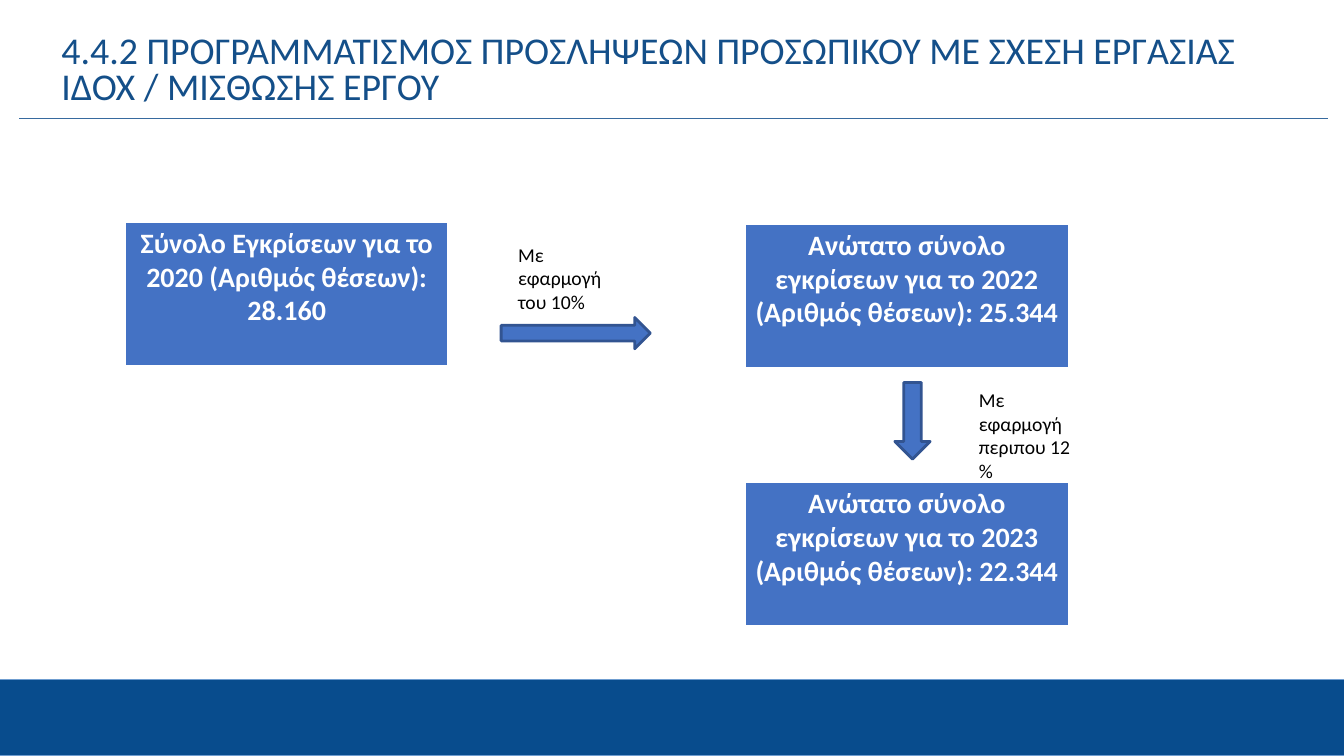
from dataclasses import dataclass

from lxml import etree
from pptx import Presentation
from pptx.dml.color import RGBColor
from pptx.enum.shapes import MSO_CONNECTOR, MSO_SHAPE
from pptx.enum.text import MSO_ANCHOR, PP_ALIGN
from pptx.oxml.ns import qn
from pptx.util import Inches, Pt

RECTANGLE = MSO_SHAPE.RECTANGLE
RIGHT_ARROW = MSO_SHAPE.RIGHT_ARROW
STRAIGHT = MSO_CONNECTOR.STRAIGHT
TOP = MSO_ANCHOR.TOP
LEFT, CENTER = PP_ALIGN.LEFT, PP_ALIGN.CENTER
TITLE_ONLY_LAYOUT = 5


@dataclass(frozen=True)
class Theme:
    font: str = "Calibri"
    title_size: float = 27
    box_size: float = 20
    note_size: float = 14
    title: str = "144F89"
    rule: str = "376A9F"
    footer: str = "084C8D"
    footer_line: str = "6F9DD0"
    box: str = "4472C4"
    arrow_line: str = "325491"
    white: str = "FFFFFF"
    black: str = "000000"


THEME = Theme()


def rgb(value):
    return RGBColor.from_string(value)


def write_text(shape, text, size, color, bold=False, align=LEFT):
    frame = shape.text_frame
    frame.word_wrap = True
    frame.vertical_anchor = TOP
    frame.text = text
    paragraph = frame.paragraphs[0]
    paragraph.alignment = align
    font = paragraph.font
    font.name, font.size, font.bold = THEME.font, Pt(size), bold
    font.color.rgb = rgb(color)
    return paragraph


def add_title(slide, text):
    title = slide.shapes.title
    title.left, title.top = Inches(0.56), Inches(0.3)
    title.width, title.height = Inches(12.79), Inches(1.19)
    paragraph = write_text(title, text, THEME.title_size, THEME.title)
    paragraph.line_spacing = 0.8
    frame = title.text_frame
    frame.margin_left = frame.margin_top = frame.margin_bottom = Inches(0.05)
    frame.margin_right = Inches(0.5)


def add_filled_shape(slide, kind, left, top, width, height, fill, line, line_width):
    shape = slide.shapes.add_shape(
        kind, Inches(left), Inches(top), Inches(width), Inches(height))
    shape.shadow.inherit = False
    shape.fill.solid()
    shape.fill.fore_color.rgb = rgb(fill)
    shape.line.color.rgb = rgb(line)
    shape.line.width = Pt(line_width)
    return shape


def add_total_box(slide, left, top, text):
    box = add_filled_shape(slide, RECTANGLE, left, top, 3.23, 1.45,
                           THEME.box, THEME.white, 3)
    write_text(box, text, THEME.box_size, THEME.white, bold=True, align=CENTER)


def add_block_arrow(slide, left, top, width, height, rotation=0):
    arrow = add_filled_shape(slide, RIGHT_ARROW, left, top, width, height,
                             THEME.box, THEME.arrow_line, 2)
    arrow.rotation = rotation


def add_note(slide, left, top, height, text):
    note = slide.shapes.add_textbox(
        Inches(left), Inches(top), Inches(1.17), Inches(height))
    write_text(note, text, THEME.note_size, THEME.black)


def add_title_rule(slide):
    y = Inches(1.17)
    rule = slide.shapes.add_connector(STRAIGHT, Inches(0.19), y, Inches(13.17), y)
    rule.line.color.rgb = rgb(THEME.rule)
    rule.line.width = Pt(0.5)
    etree.SubElement(rule._element.spPr, qn("a:effectLst"))


def main():
    presentation = Presentation()
    presentation.slide_width = Inches(13.33)
    presentation.slide_height = Inches(7.5)
    slide = presentation.slides.add_slide(
        presentation.slide_layouts[TITLE_ONLY_LAYOUT])

    # Title, footer band and rule
    add_title(slide, "4.4.2 ΠΡΟΓΡΑΜΜΑΤΙΣΜΟΣ ΠΡΟΣΛΗΨΕΩΝ ΠΡΟΣΩΠΙΚΟΥ ΜΕ ΣΧΕΣΗ "
                     "ΕΡΓΑΣΙΑΣ ΙΔΟΧ / ΜΙΣΘΩΣΗΣ ΕΡΓΟΥ")
    add_filled_shape(slide, RECTANGLE, -0.02, 6.74, 13.37, 0.76,
                     THEME.footer, THEME.footer_line, 1)
    add_title_rule(slide)

    # Approvals of 2020, reduced to the ceiling for 2022
    add_total_box(slide, 1.23, 2.19,
                  "Σύνολο Εγκρίσεων για το 2020 (Αριθμός θέσεων): 28.160")
    add_block_arrow(slide, 4.97, 3.15, 1.48, 0.31)
    add_note(slide, 5.04, 2.36, 0.81, "Με εφαρμογή του 10%")

    # Ceilings for 2022 and 2023
    for top, year, total in ((2.21, 2022, "25.344"), (4.77, 2023, "22.344")):
        add_total_box(slide, 7.38, top,
                      f"Ανώτατο σύνολο εγκρίσεων για το {year} "
                      f"(Αριθμός θέσεων): {total}")
    add_block_arrow(slide, 8.67, 4, 0.76, 0.35, rotation=90)
    add_note(slide, 9.61, 3.8, 1.04, "Με εφαρμογή περιπου 12 %")

    presentation.save("out.pptx")


if __name__ == "__main__":
    main()
